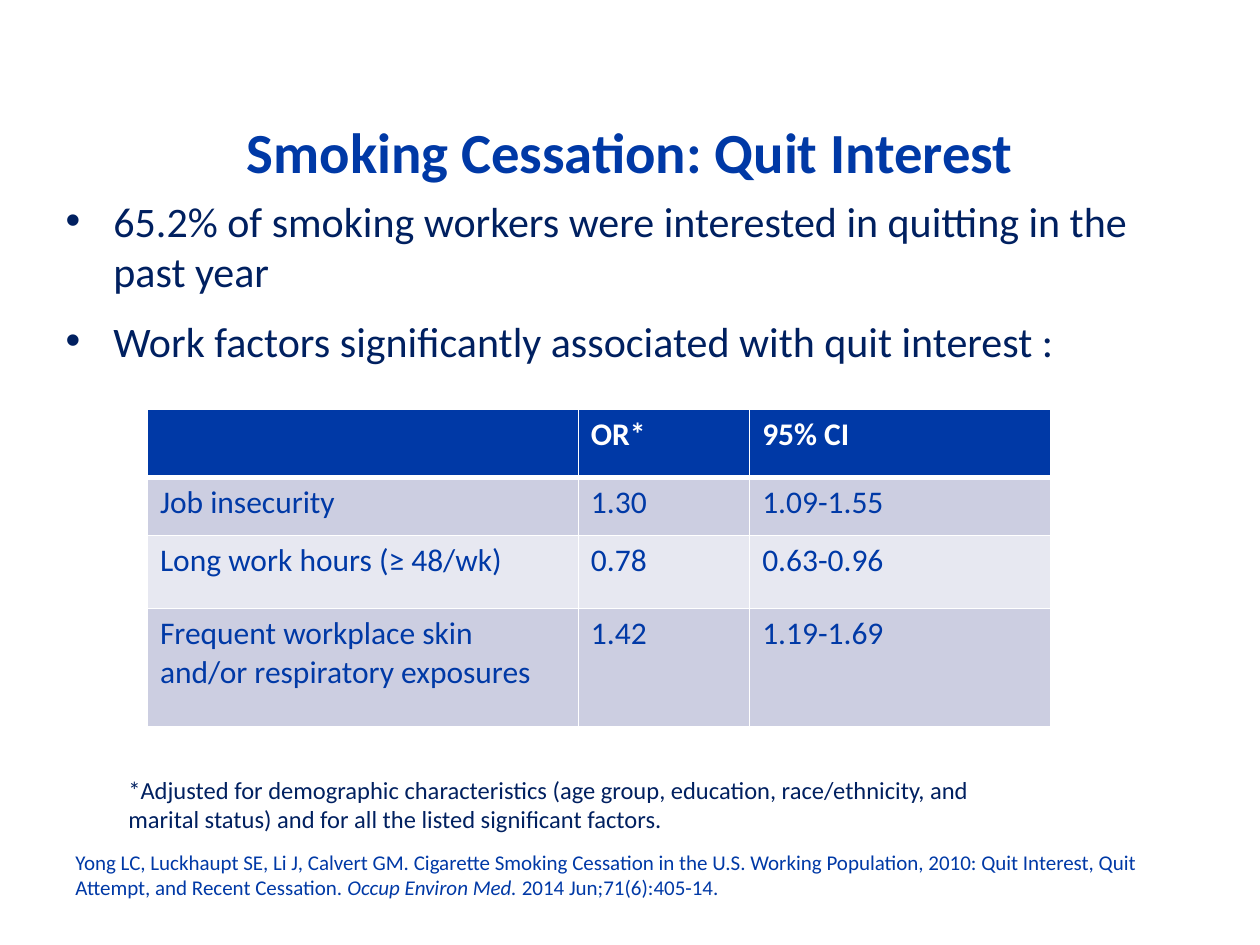
from collections import namedtuple
from dataclasses import dataclass

from lxml import etree
from pptx import Presentation, util as u
from pptx.dml.color import RGBColor
from pptx.enum import text as t
from pptx.oxml import ns

COLS, ROWS = 100, 75
UNIT = u.Inches(0.1)
Box = namedtuple("Box", "x y w h")


@dataclass(frozen=True)
class Theme:
    font: str = "Calibri"
    blue: str = "0039A6"
    navy: str = "002060"
    white: str = "FFFFFF"
    bands: tuple = ("CCCEE1", "E7E8F1")
    title: float = 32.4
    body: float = 24
    cell: float = 18
    note: float = 14
    cite: float = 12


THEME = Theme()


def grid(val):
    return round(val * UNIT)


def place(shape, box):
    shape.left, shape.top, shape.width, shape.height = map(grid, box)


def write(para, words, size, color, bold=False, italic=False):
    run = para.add_run()
    run.text = words
    font = run.font
    font.name, font.size = THEME.font, u.Pt(size)
    font.bold, font.italic = bold, italic
    font.color.rgb = RGBColor.from_string(color)


def add_title(slide, box, words):
    shape = slide.shapes.title
    place(shape, box)
    frame = shape.text_frame
    frame.auto_size = t.MSO_AUTO_SIZE.NONE
    frame.vertical_anchor = t.MSO_ANCHOR.BOTTOM
    frame.margin_bottom = grid(0.8)
    para = frame.paragraphs[0]
    para.alignment = t.PP_ALIGN.CENTER
    write(para, words, THEME.title, THEME.blue, bold=True)


def add_list(slide, box, items):
    shape = slide.placeholders[1]
    place(shape, box)
    frame = shape.text_frame
    frame.auto_size = t.MSO_AUTO_SIZE.NONE
    for i, item in enumerate(items):
        para = frame.add_paragraph() if i else frame.paragraphs[0]
        props = para._p.get_or_add_pPr()
        props.set("marL", str(grid(3.8)))
        props.set("indent", str(-grid(3.8)))
        etree.SubElement(props, ns.qn("a:buChar"), char="•")
        para.space_before = u.Pt(0.2 * THEME.body if i else 0)
        para.space_after = u.Pt(6)
        write(para, item, THEME.body, THEME.navy)


def add_edge(cell, side, width):
    props = cell._tc.get_or_add_tcPr()
    line = etree.SubElement(props, ns.qn("a:ln" + side), w=str(u.Pt(width)))
    fill = etree.SubElement(line, ns.qn("a:solidFill"))
    etree.SubElement(fill, ns.qn("a:srgbClr"), val=THEME.white)


def add_grid(slide, box, cols, rows, data):
    area = map(grid, box)
    table = slide.shapes.add_table(len(rows), len(cols), *area).table
    for col, width in zip(table.columns, cols):
        col.width = grid(width)
    for r, (row, height) in enumerate(zip(table.rows, rows)):
        row.height = grid(height)
        head = r == 0
        back = THEME.blue if head else THEME.bands[(r - 1) % 2]
        ink = THEME.white if head else THEME.blue
        for cell, words in zip(row.cells, data[r]):
            for side in "LRTB":
                thick = (head and side == "B") or (r == 1 and side == "T")
                add_edge(cell, side, 3 if thick else 1)
            cell.fill.solid()
            cell.fill.fore_color.rgb = RGBColor.from_string(back)
            if words:
                para = cell.text_frame.paragraphs[0]
                write(para, words, THEME.cell, ink, bold=head)


def add_note(slide, box, parts, size, color):
    frame = slide.shapes.add_textbox(*map(grid, box)).text_frame
    frame.word_wrap = True
    for words, italic in parts:
        write(frame.paragraphs[0], words, size, color, italic=italic)


def main():
    deck = Presentation()
    deck.slide_width, deck.slide_height = grid(COLS), grid(ROWS)
    slide = deck.slides.add_slide(deck.slide_layouts[1])
    add_title(slide, Box(5, 3, 90, 12.5), "Smoking Cessation: Quit Interest")
    add_list(slide, Box(4.2, 15, 90.8, 52), [
        "65.2% of smoking workers were interested in quitting in the past year",
        "Work factors significantly associated with quit interest :",
    ])
    add_note(slide, Box(5, 66.9, 90.9, 5), [
        ("Yong LC, Luckhaupt SE, Li J, Calvert GM. Cigarette Smoking Cessation "
         "in the U.S. Working Population, 2010: Quit Interest, Quit Attempt, "
         "and Recent Cessation. ", False),
        ("Occup Environ Med. ", True),
        ("2014 Jun;71(6):405-14.", False),
    ], THEME.cite, THEME.blue)
    add_grid(slide, Box(11.7, 32.5, 71.7, 25.2),
             [34.2, 13.6, 23.9], [5.4, 4.6, 5.8, 9.4], [
        ("", "OR*", "95% CI"),
        ("Job insecurity", "1.30", "1.09-1.55"),
        ("Long work hours (≥ 48/wk)", "0.78", "0.63-0.96"),
        ("Frequent workplace skin and/or respiratory exposures",
         "1.42", "1.19-1.69"),
    ])
    add_note(slide, Box(9.2, 61, 74.2, 5.7), [
        ("*Adjusted for demographic characteristics (age group, education, "
         "race/ethnicity, and marital status) and for all the listed "
         "significant factors.", False),
    ], THEME.note, THEME.navy)
    deck.save("out.pptx")


if __name__ == "__main__":
    main()
